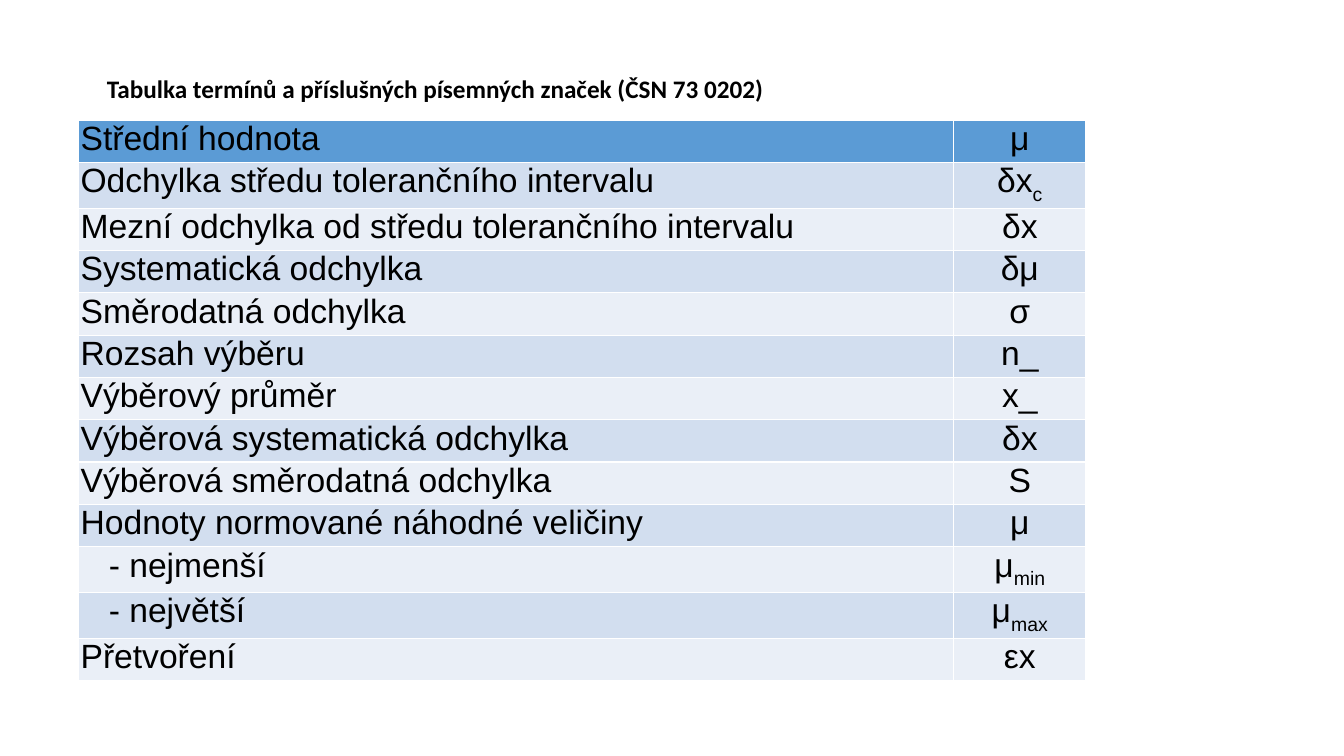
from pptx import Presentation
from pptx.dml.color import RGBColor
from pptx.enum.text import MSO_ANCHOR, MSO_AUTO_SIZE, PP_ALIGN
from pptx.util import Inches, Pt

HEAD, BANDS = "5B9BD5", ("EAEFF7", "D2DEEF")
BLACK = "000000"
INDENT = 0.28

# Term, symbol, subscript
TERMS = [
    ("Střední hodnota", "μ", ""),
    ("Odchylka středu tolerančního intervalu", "δx", "c"),
    ("Mezní odchylka od středu tolerančního intervalu", "δx", ""),
    ("Systematická odchylka", "δμ", ""),
    ("Směrodatná odchylka", "σ", ""),
    ("Rozsah výběru", "n_", ""),
    ("Výběrový průměr", "x_", ""),
    ("Výběrová systematická odchylka", "δx", ""),
    ("Výběrová směrodatná odchylka", "S", ""),
    ("Hodnoty normované náhodné veličiny", "μ", ""),
    ("- nejmenší", "μ", "min"),
    ("- největší", "μ", "max"),
    ("Přetvoření", "εx", ""),
]


def color(code):
    return RGBColor.from_string(code)


def set_font(para, name, size, bold=False):
    font = para.font
    font.name, font.size, font.bold = name, Pt(size), bold
    font.color.rgb = color(BLACK)


def add_title(slide, text):
    title = slide.shapes.title
    title.left, title.top = Inches(0.96), Inches(0.68)
    title.width, title.height = Inches(6.77), Inches(0.4)
    frame = title.text_frame
    frame.text = text
    frame.word_wrap = False
    frame.auto_size = MSO_AUTO_SIZE.SHAPE_TO_FIT_TEXT
    frame.vertical_anchor = MSO_ANCHOR.TOP
    para = frame.paragraphs[0]
    para.alignment = PP_ALIGN.LEFT
    set_font(para, "Calibri", 18, bold=True)


def fill_cell(cell, text, fill, align, sub="", indent=0):
    cell.margin_left = Inches(0.02 + indent)
    cell.margin_right = Inches(0.02)
    cell.margin_top = cell.margin_bottom = 0
    cell.fill.solid()
    cell.fill.fore_color.rgb = color(fill)
    para = cell.text_frame.paragraphs[0]
    para.alignment = align
    set_font(para, "Arial", 24)
    para.add_run().text = text
    if sub:
        run = para.add_run()
        run.text = sub
        run.font._element.set("baseline", "-25000")


def add_terms(slide):
    count = len(TERMS)
    table = slide.shapes.add_table(
        count, 2, Inches(0.78), Inches(1.19), Inches(9.99), Inches(0.42 * count)
    ).table
    table.columns[0].width = Inches(8.68)
    table.columns[1].width = Inches(1.31)
    for i, (term, sign, sub) in enumerate(TERMS):
        fill = BANDS[i % 2] if i else HEAD
        indent = INDENT if term.startswith("-") else 0
        fill_cell(table.cell(i, 0), term, fill, PP_ALIGN.LEFT, indent=indent)
        fill_cell(table.cell(i, 1), sign, fill, PP_ALIGN.CENTER, sub)


def main():
    deck = Presentation()
    deck.slide_width, deck.slide_height = Inches(13.33), Inches(7.5)
    slide = deck.slides.add_slide(deck.slide_layouts[5])
    add_title(slide, "Tabulka termínů a příslušných písemných značek (ČSN 73 0202)")
    add_terms(slide)
    deck.save("out.pptx")


if __name__ == "__main__":
    main()
